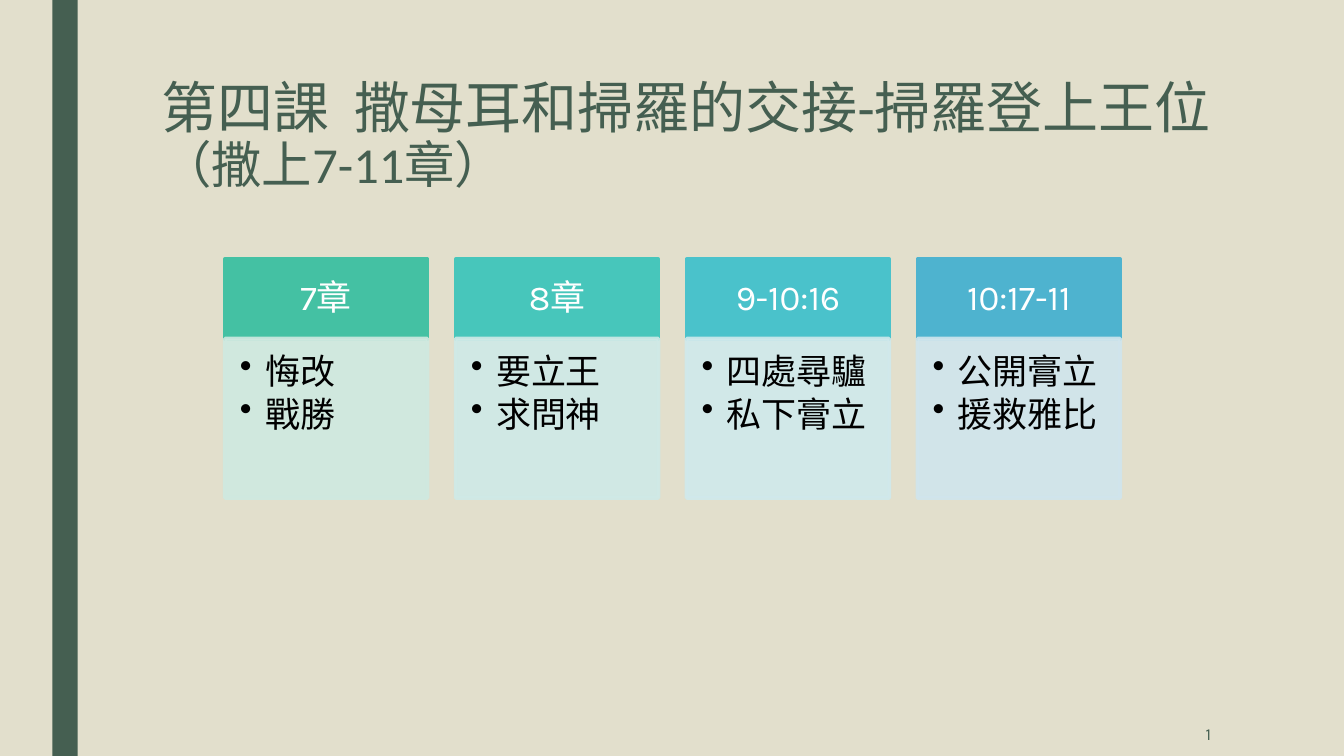
from dataclasses import dataclass

from lxml.etree import SubElement
from pptx import Presentation
from pptx.dml.color import RGBColor
from pptx.enum.shapes import MSO_SHAPE as Shape
from pptx.enum.text import MSO_ANCHOR as Anchor, PP_ALIGN as Align
from pptx.oxml.ns import qn
from pptx.util import Inches, Pt


@dataclass(frozen=True)
class Theme:
    paper: str = "E2DFCC"
    green: str = "455F51"
    white: str = "FFFFFF"
    black: str = "000000"
    title_font: str = "Calibri"
    body_font: str = "Karla"
    title_size: int = 40
    subtitle_size: int = 36
    card_size: int = 25
    number_size: int = 12
    border: float = 2.75
    panel_opacity: int = 90


THEME = Theme()
WIDTH, HEIGHT = 13.33, 7.5

# Card grid: columns of equal pitch; the panel is two header rows high.
GRID_LEFT, GRID_TOP = 2.23, 2.57
COLUMN, PITCH, ROW = 2.01, 2.29, 0.79

CARDS = [
    ("7章", "44C1A3", "CFE9E0", ["悔改", "戰勝"]),
    ("8章", "47C6BB", "CFEAE7", ["要立王", "求問神"]),
    ("9-10:16", "4AC2CB", "D0E9EC", ["四處尋驢", "私下膏立"]),
    ("10:17-11", "4EB3CF", "D0E5ED", ["公開膏立", "援救雅比"]),
]


def color(value):
    return RGBColor.from_string(value)


def add_span(para, text, size, ink, font=THEME.body_font):
    span = para.add_run()
    span.text = text
    span.font.size = Pt(size)
    span.font.name = font
    span.font.color.rgb = color(ink)


def set_frame(box, anchor, insets=(0.1, 0.05, 0.1, 0.05)):
    """Wrap the text of a box, anchor it and set left, top, right, bottom insets."""
    frame = box.text_frame
    frame.word_wrap = True
    frame.vertical_anchor = anchor
    (frame.margin_left, frame.margin_top,
     frame.margin_right, frame.margin_bottom) = map(Inches, insets)
    return frame


def add_text_box(page, area, anchor):
    return set_frame(page.shapes.add_textbox(*map(Inches, area)), anchor)


def add_block(page, area, fill, border=0, opacity=100):
    block = page.shapes.add_shape(Shape.RECTANGLE, *map(Inches, area))
    block.shadow.inherit = False
    block.fill.solid()
    block.fill.fore_color.rgb = color(fill)
    if border:
        block.line.width = Pt(border)
        block.line.color.rgb = color(fill)
    else:
        block.line.fill.background()
    if opacity < 100:
        for paint in block._element.spPr.iter(qn("a:srgbClr")):
            SubElement(paint, qn("a:alpha"), val=str(opacity * 1000))
    return block


def add_bullet(para, indent=0.25):
    settings = para._p.get_or_add_pPr()
    settings.set("marL", str(Inches(indent)))
    settings.set("indent", str(-Inches(indent)))
    SubElement(settings, qn("a:buChar"), char="•")


def add_title(page):
    frame = add_text_box(page, (1.5, HEIGHT / 10, 10.83, 1.41), Anchor.TOP)
    para = frame.paragraphs[0]
    para.line_spacing = 0.89
    add_span(para, "第四課  撒母耳和掃羅的交接-掃羅登上王位 ",
             THEME.title_size, THEME.green, THEME.title_font)
    add_span(para, "（撒上7-11章）",
             THEME.subtitle_size, THEME.green, THEME.title_font)


def add_page_number(page):
    frame = add_text_box(page, (10.36, 7.06, 1.75, 0.44), Anchor.MIDDLE)
    para = frame.paragraphs[0]
    para.alignment = Align.RIGHT
    add_span(para, "1", THEME.number_size, THEME.green)


def add_card(page, column, heading, header_fill, panel_fill, points):
    left = GRID_LEFT + column * PITCH
    header = add_block(page, (left, GRID_TOP, COLUMN, ROW), header_fill, THEME.border)
    para = set_frame(header, Anchor.MIDDLE, (0.19, 0.11, 0.19, 0.11)).paragraphs[0]
    para.alignment = Align.CENTER
    para.line_spacing = 0.9
    add_span(para, heading, THEME.card_size, THEME.white)

    panel = add_block(page, (left, GRID_TOP + ROW, COLUMN, 2 * ROW), panel_fill,
                      THEME.border, THEME.panel_opacity)
    frame = set_frame(panel, Anchor.TOP, (0.15, 0.15, 0.19, 0.22))
    for index, point in enumerate(points):
        para = frame.add_paragraph() if index else frame.paragraphs[0]
        para.alignment = Align.LEFT
        para.line_spacing = 0.9
        para.space_after = Pt(0.15 * THEME.card_size)
        add_bullet(para)
        add_span(para, point, THEME.card_size, THEME.black)


def main():
    deck = Presentation()
    deck.slide_width, deck.slide_height = Inches(WIDTH), Inches(HEIGHT)
    page = deck.slides.add_slide(deck.slide_layouts[6])
    page.background.fill.solid()
    page.background.fill.fore_color.rgb = color(THEME.paper)

    add_block(page, (0.52, 0, 0.25, HEIGHT), THEME.green)
    add_title(page)
    add_page_number(page)
    for column, card in enumerate(CARDS):
        add_card(page, column, *card)
    deck.save("out.pptx")


if __name__ == "__main__":
    main()
